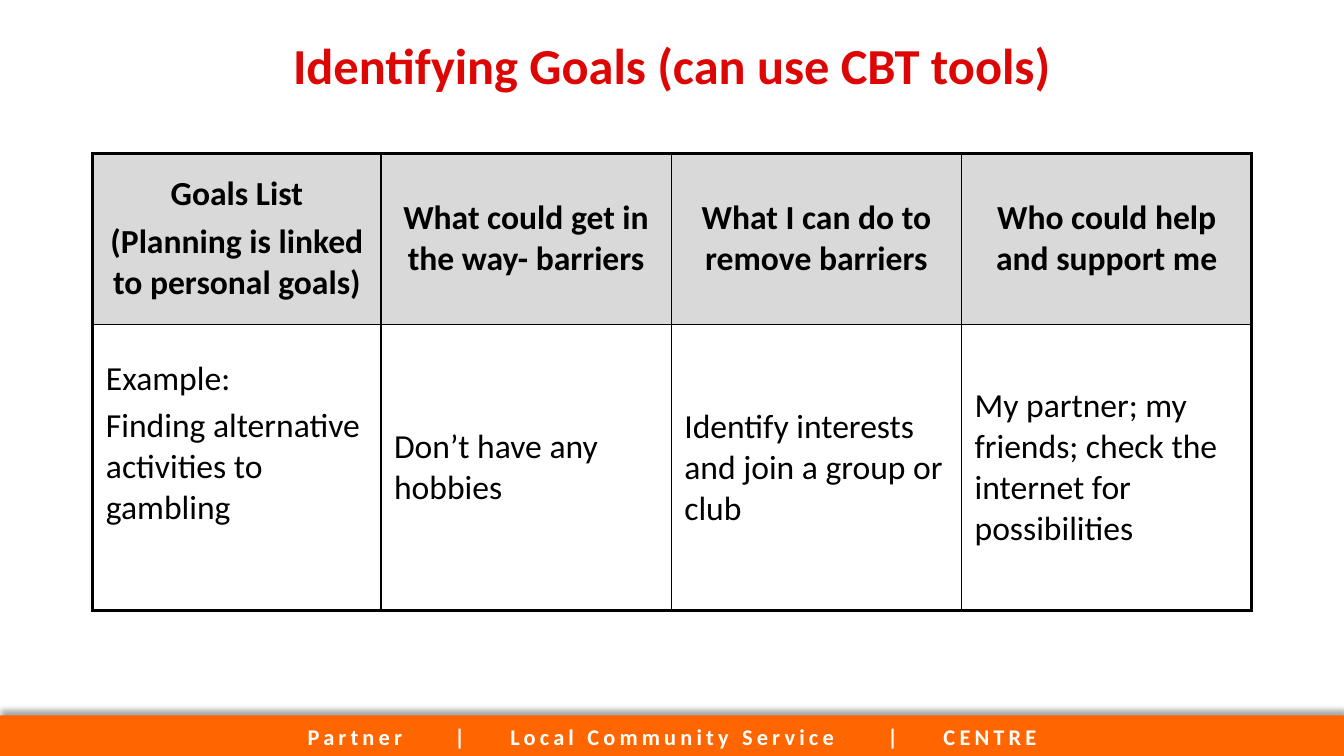
from lxml.etree import SubElement
from pptx import Presentation
from pptx.dml.color import RGBColor
from pptx.enum.shapes import MSO_SHAPE as SHAPE
from pptx.enum.text import MSO_ANCHOR as ANCHOR, PP_ALIGN as ALIGN
from pptx.oxml import parse_xml
from pptx.oxml.ns import nsdecls, qn
from pptx.util import Cm, Pt

COLORS = {"title": "DC0705", "text": "000000", "header": "D9D9D9",
          "body": "FFFFFF", "footer": "FF6600", "footer_text": "FFFFFF",
          "shadow": "A6A6A6"}
FONT = "Calibri"
THICK, THIN = Pt(2.25), Pt(1)
WIDTH, HEIGHT = 33.87, 19.05

GOALS = [
    [["Goals List", "(Planning is linked to personal goals)"],
     ["What could get in the way- barriers"],
     ["What I can do to remove barriers"],
     ["Who could help and support me"]],
    [["Example:", "Finding alternative activities to gambling"],
     ["Don’t have any hobbies"],
     ["Identify interests and join a group or club"],
     ["My partner; my friends; check the internet for possibilities"]],
]
# Footer entries with the centre of each, in cm from the left edge
FOOTER = [("Partner", 9), ("|", 11.64), ("Local Community Service", 17),
          ("|", 22.55), ("CENTRE", 24.95)]


def rgb(name):
    return RGBColor.from_string(COLORS[name])


def add_run(p, text, size, color, bold=False):
    r = p.add_run()
    r.text = text
    r.font.name, r.font.size, r.font.bold = FONT, Pt(size), bold
    r.font.color.rgb = rgb(color)
    return r


def add_title(slide, x, y, w, h):
    sp = slide.shapes.title
    sp.left, sp.top, sp.width, sp.height = Cm(x), Cm(y), Cm(w), Cm(h)
    tf = sp.text_frame
    tf.vertical_anchor = ANCHOR.MIDDLE
    p = tf.paragraphs[0]
    p.alignment, p.line_spacing = ALIGN.CENTER, 0.9
    add_run(p, "Identifying Goals (can use CBT tools)", 36, "title", True)


def set_borders(cell, widths):
    tc_pr = cell._tc.get_or_add_tcPr()
    for i, (side, width) in enumerate(zip("LRTB", widths)):
        tc_pr.insert(i, parse_xml(
            f'<a:ln{side} {nsdecls("a")} w="{width}"><a:solidFill>'
            f'<a:srgbClr val="{COLORS["text"]}"/></a:solidFill></a:ln{side}>'))


def fill_cell(cell, texts, is_header):
    cell.fill.solid()
    cell.fill.fore_color.rgb = rgb("header" if is_header else "body")
    cell.vertical_anchor = ANCHOR.MIDDLE
    cell.margin_left = cell.margin_right = Cm(0.33)
    cell.margin_top = cell.margin_bottom = Cm(0.13)
    tf = cell.text_frame
    for i, text in enumerate(texts):
        p = tf.add_paragraph() if i else tf.paragraphs[0]
        p.alignment = ALIGN.CENTER if is_header else ALIGN.LEFT
        p.space_before = Pt(4.8)
        add_run(p, text, 24, "text", is_header)


def add_goals_table(slide, x, y, w, h):
    n_rows, n_cols = len(GOALS), len(GOALS[0])
    table = slide.shapes.add_table(n_rows, n_cols, Cm(x), Cm(y), Cm(w), Cm(h)).table
    table.first_row = table.horz_banding = False
    # The first column is slightly narrower than the equal others
    first_w = 7.26
    for j, col in enumerate(table.columns):
        col.width = Cm((w - first_w) / (n_cols - 1) if j else first_w)
    header_h = 4.32
    table.rows[0].height, table.rows[1].height = Cm(header_h), Cm(h - header_h)
    for i, row in enumerate(GOALS):
        for j, texts in enumerate(row):
            cell = table.cell(i, j)
            fill_cell(cell, texts, i == 0)
            # Thick frame outside, thin lines inside
            outer = (j == 0, j == n_cols - 1, i == 0, i == n_rows - 1)
            set_borders(cell, [THICK if edge else THIN for edge in outer])
    # The example sits a little above the middle
    table.cell(1, 0).margin_bottom = Cm(1.35)


def add_footer(slide, x, y, w, h):
    sp = slide.shapes.add_shape(SHAPE.RECTANGLE, Cm(x), Cm(y), Cm(w), Cm(h))
    sp.fill.solid()
    sp.fill.fore_color.rgb = rgb("footer")
    sp.line.fill.background()
    # Soft shadow along the top edge
    sp.shadow.inherit = False
    effects = sp._element.spPr.find(qn("a:effectLst"))
    shadow = SubElement(effects, qn("a:outerShdw"), blurRad=str(Pt(4)),
                        dist=str(Pt(4)), dir=str(280 * 60000), rotWithShape="0")
    SubElement(shadow, qn("a:srgbClr"), val=COLORS["shadow"])
    # Entries centred on tab stops
    tf = sp.text_frame
    tf.margin_left = tf.margin_right = tf.margin_top = tf.margin_bottom = 0
    tf.vertical_anchor = ANCHOR.MIDDLE
    p = tf.paragraphs[0]
    p.alignment = ALIGN.LEFT
    tabs = SubElement(p._p.get_or_add_pPr(), qn("a:tabLst"))
    for text, centre in FOOTER:
        SubElement(tabs, qn("a:tab"), pos=str(Cm(centre)), algn="ctr")
        r = add_run(p, "\t" + text, 16, "footer_text", True)
        r.font._element.set("spc", "300")


def main():
    prs = Presentation()
    prs.slide_width, prs.slide_height = Cm(WIDTH), Cm(HEIGHT)
    slide = prs.slides.add_slide(prs.slide_layouts[5])
    add_title(slide, 0, 0, WIDTH, 3.43)
    add_goals_table(slide, 2.34, 3.86, 29.21, 11.53)
    add_footer(slide, 0, 18.03, WIDTH, 1.04)
    prs.save("out.pptx")


if __name__ == "__main__":
    main()
